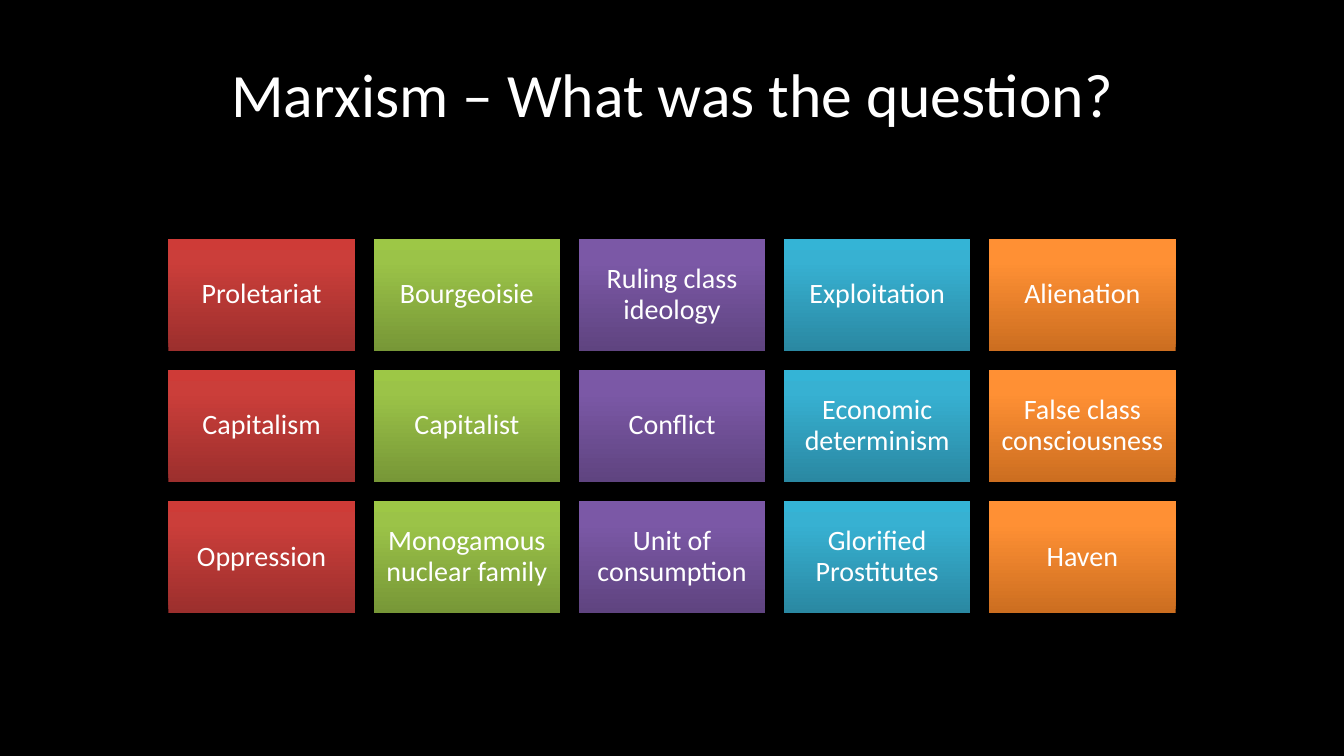
from copy import deepcopy

from pptx import Presentation
from pptx.dml.color import RGBColor as RGB
from pptx.enum.shapes import MSO_SHAPE as Shape
from pptx.enum.text import MSO_ANCHOR as Anchor, PP_ALIGN as Align
from pptx.oxml.ns import qn
from pptx.util import Inches, Pt

BLACK = RGB(0x00, 0x00, 0x00)
WHITE = RGB(0xFF, 0xFF, 0xFF)

# Gradient of each column, from bottom to top
RED = RGB(0x9C, 0x2F, 0x2D), RGB(0xCB, 0x3E, 0x3A), RGB(0xCE, 0x3B, 0x37)
GREEN = RGB(0x77, 0x97, 0x37), RGB(0x9B, 0xC3, 0x48), RGB(0x9D, 0xC7, 0x46)
PURPLE = RGB(0x5F, 0x44, 0x80), RGB(0x7B, 0x58, 0xA6), RGB(0x7C, 0x57, 0xA8)
TEAL = RGB(0x2A, 0x88, 0xA2), RGB(0x37, 0xB1, 0xD2), RGB(0x34, 0xB4, 0xD6)
ORANGE = RGB(0xCC, 0x6E, 0x20), RGB(0xFF, 0x90, 0x34), RGB(0xFF, 0x91, 0x36)
HUES = RED, GREEN, PURPLE, TEAL, ORANGE
STOPS = 0, 0.8, 1

TERMS = (
    ("Proletariat", "Bourgeoisie", "Ruling class ideology",
     "Exploitation", "Alienation"),
    ("Capitalism", "Capitalist", "Conflict",
     "Economic determinism", "False class consciousness"),
    ("Oppression", "Monogamous nuclear family", "Unit of consumption",
     "Glorified Prostitutes", "Haven"),
)

# Grid of terms, in inches
LEFT, TOP = 1.67, 2.37
WIDTH, HEIGHT = 1.85, 1.11
STEP_X, STEP_Y = 2.035, 1.3


def write(shape, text, size, inset=0.1, leading=1.0):
    """Put centred white text in a shape."""
    frame = shape.text_frame
    frame.word_wrap = True
    frame.vertical_anchor = Anchor.MIDDLE
    frame.margin_left = frame.margin_right = Inches(inset)
    frame.margin_top = frame.margin_bottom = Inches(min(inset, 0.08))
    para = frame.paragraphs[0]
    para.alignment = Align.CENTER
    para.line_spacing = leading
    run = para.add_run()
    run.text = text
    run.font.name = "Calibri"
    run.font.size = Pt(size)
    run.font.color.rgb = WHITE


def shade(shape, hues):
    """Fill a shape with a three-stop gradient running upwards."""
    fill = shape.fill
    fill.gradient()
    fill.gradient_angle = 90
    stops = next(shape._element.spPr.iter(qn("a:gsLst")))
    stops.append(deepcopy(stops[-1]))
    for stop, place, hue in zip(fill.gradient_stops, STOPS, hues):
        stop.position = place
        stop.color.rgb = hue


def add_title(slide, text):
    box = slide.shapes.add_textbox(
        Inches(0.67), Inches(0.3), Inches(12), Inches(1.25))
    write(box, text, size=44)


def add_term(slide, text, left, top, hues):
    tile = slide.shapes.add_shape(
        Shape.RECTANGLE, Inches(left), Inches(top),
        Inches(WIDTH), Inches(HEIGHT))
    tile.shadow.inherit = False
    tile.line.fill.background()
    shade(tile, hues)
    write(tile, text, size=20, inset=0.08, leading=0.9)


def main():
    deck = Presentation()
    deck.slide_width, deck.slide_height = Inches(13.33), Inches(7.5)
    slide = deck.slides.add_slide(deck.slide_layouts[6])

    # Background
    back = slide.background.fill
    back.solid()
    back.fore_color.rgb = BLACK

    # Title
    add_title(slide, "Marxism – What was the question?")

    # Grid of terms, one colour a column
    for row, terms in enumerate(TERMS):
        for col, (term, hues) in enumerate(zip(terms, HUES)):
            add_term(slide, term, LEFT + col * STEP_X,
                     TOP + row * STEP_Y, hues)

    deck.save("out.pptx")


if __name__ == "__main__":
    main()
